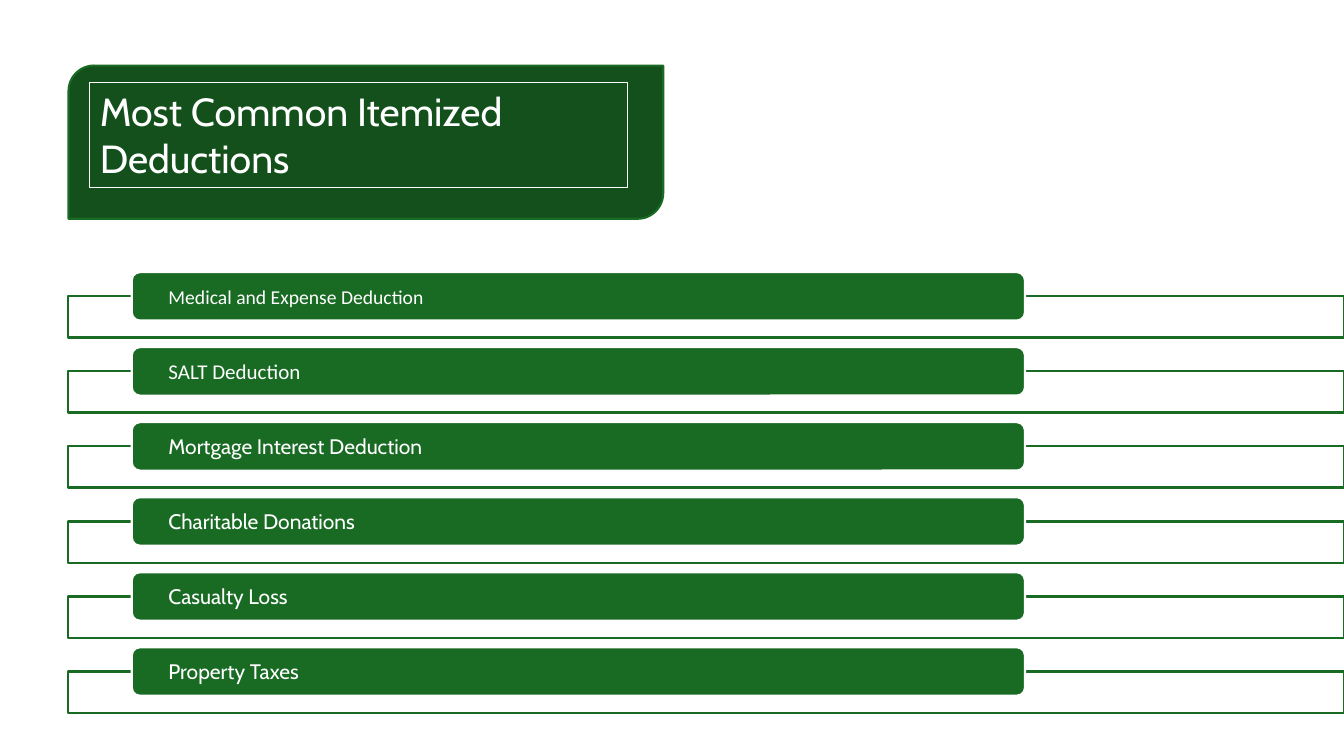
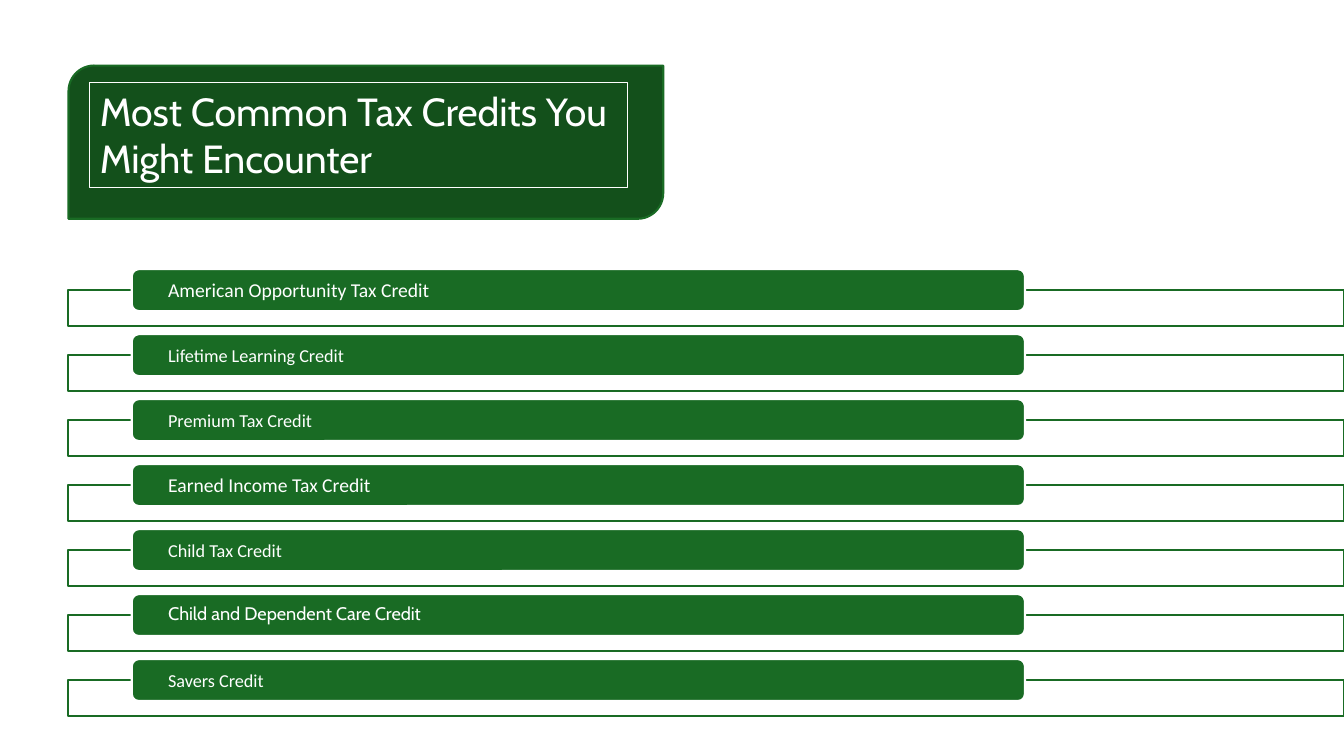
from collections import namedtuple

from lxml import etree
from pptx import Presentation
from pptx.dml.color import RGBColor
from pptx.enum.shapes import MSO_SHAPE as Preset
from pptx.enum.text import MSO_ANCHOR as Anchor, MSO_AUTO_SIZE as AutoSize, PP_ALIGN as Align
from pptx.oxml.ns import qn
from pptx.util import Inches, Pt

WHITE = RGBColor(0xFF, 0xFF, 0xFF)
GREEN = RGBColor(0x19, 0x6B, 0x24)
DARK_GREEN = RGBColor(0x13, 0x50, 0x1B)
HEADING_FONT, TEXT_FONT = "Cabin", "Calibri"

SLIDE_WIDTH, SLIDE_HEIGHT = Inches(13.33), Inches(7.5)
TITLE_ONLY_LAYOUT = 5

# Proportions of the list rows
ROW_PITCH = 1.55      # distance between rows, in bar heights
PANEL_HEIGHT = 0.85   # in bar heights
BAR_INDENT, BAR_WIDTH = 0.05, 0.7  # in list widths
BAR_PADDING = Inches(0.34)

Box = namedtuple("Box", "left top width height")
Item = namedtuple("Item", "text size font line_spacing", defaults=(TEXT_FONT, None))


def percent_box(left, top, width, height):
    """Box given in percent of the slide's width and height."""
    return Box(int(SLIDE_WIDTH * left / 100), int(SLIDE_HEIGHT * top / 100),
               int(SLIDE_WIDTH * width / 100), int(SLIDE_HEIGHT * height / 100))


BANNER_BOX = percent_box(5.1, 8.67, 44.25, 20.27)
TITLE_BOX = percent_box(6.68, 10.93, 39.98, 13.87)

DEDUCTIONS = [
    Item("Medical and Expense Deduction", 14),
    Item("SALT Deduction", 15),
    Item("Mortgage Interest Deduction", 15, HEADING_FONT),
    Item("Charitable Donations", 15, HEADING_FONT),
    Item("Casualty Loss", 15, HEADING_FONT),
    Item("Property Taxes", 15, HEADING_FONT),
]
CREDITS = [
    Item("American Opportunity Tax Credit", 14),
    Item("Lifetime Learning Credit", 13),
    Item("Premium Tax Credit", 13),
    Item("Earned Income Tax Credit", 14),
    Item("Child Tax Credit", 13),
    Item("Child and Dependent Care Credit", 13, HEADING_FONT, 0.9),
    Item("Savers Credit", 13),
]
SLIDES = [
    ("Most Common Itemized Deductions", DEDUCTIONS, percent_box(5.06, 36, 94.94, 58.27)),
    ("Most Common Tax Credits You Might Encounter", CREDITS,
     percent_box(5.06, 35.6, 94.94, 59.07)),
]


def add_preset(shapes, preset, box, fill, line, opacity=None):
    shape = shapes.add_shape(preset, *box)
    shape.shadow.inherit = False
    shape.fill.solid()
    shape.fill.fore_color.rgb = fill
    shape.line.color.rgb = line
    shape.line.width = Pt(1.5)
    if opacity is not None:
        color = shape.element.spPr.find(qn("a:solidFill"))[0]
        etree.SubElement(color, qn("a:alpha"), val=str(opacity * 1000))
    return shape


def write_text(shape, text, size, font, line_spacing=None, anchor=Anchor.MIDDLE):
    frame = shape.text_frame
    frame.word_wrap = True
    frame.vertical_anchor = anchor
    paragraph = frame.paragraphs[0]
    paragraph.alignment = Align.LEFT
    paragraph.line_spacing = line_spacing
    run = paragraph.add_run()
    run.text = text
    run.font.size = Pt(size)
    run.font.name = font
    run.font.color.rgb = WHITE
    return frame


def add_title_banner(slide, text, banner_box, title_box):
    add_preset(slide.shapes, Preset.ROUND_2_DIAG_RECTANGLE, banner_box, DARK_GREEN, GREEN)
    # Framed title, in front of the banner
    title = slide.shapes.title
    slide.shapes.element.append(title.element)
    title.left, title.top, title.width, title.height = title_box
    title.line.color.rgb = WHITE
    title.line.width = Pt(0.75)
    frame = write_text(title, text, 28, HEADING_FONT, anchor=Anchor.TOP)
    frame.auto_size = AutoSize.SHAPE_TO_FIT_TEXT


def add_bar_list(slide, items, box):
    """Rows of bars, each over the top edge of an outlined panel, filling the box."""
    bar_height = box.height / ((len(items) - 1) * ROW_PITCH + 0.5 + PANEL_HEIGHT)
    shapes = slide.shapes.add_group_shape().shapes
    for row, item in enumerate(items):
        top = box.top + row * ROW_PITCH * bar_height
        panel_box = Box(box.left, int(top + bar_height / 2),
                        box.width, int(PANEL_HEIGHT * bar_height))
        bar_box = Box(int(box.left + BAR_INDENT * box.width), int(top),
                      int(BAR_WIDTH * box.width), int(bar_height))
        add_preset(shapes, Preset.RECTANGLE, panel_box, WHITE, GREEN, opacity=90)
        bar = add_preset(shapes, Preset.ROUNDED_RECTANGLE, bar_box, GREEN, WHITE)
        frame = write_text(bar, **item._asdict())
        frame.margin_left = frame.margin_right = BAR_PADDING
        frame.margin_top = frame.margin_bottom = 0


def main():
    presentation = Presentation()
    presentation.slide_width, presentation.slide_height = SLIDE_WIDTH, SLIDE_HEIGHT
    for title, items, list_box in SLIDES:
        slide = presentation.slides.add_slide(presentation.slide_layouts[TITLE_ONLY_LAYOUT])
        add_bar_list(slide, items, list_box)
        add_title_banner(slide, title, BANNER_BOX, TITLE_BOX)
    presentation.save("out.pptx")


if __name__ == "__main__":
    main()
